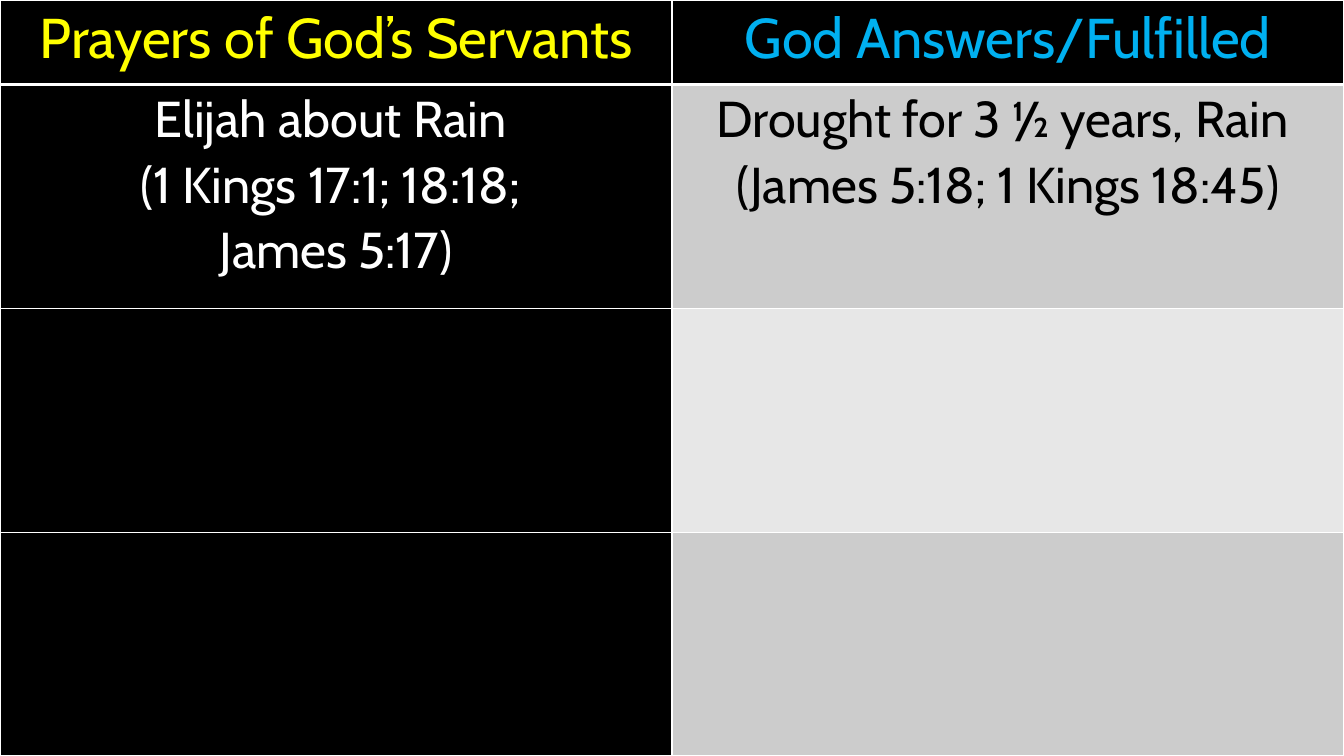
"""Build a slide with a table of prayers and how God answered them."""
from lxml.etree import SubElement
from pptx import Presentation
from pptx.dml.color import RGBColor as RGB
from pptx.enum.text import MSO_ANCHOR, PP_ALIGN
from pptx.oxml.ns import qn
from pptx.util import Cm, Pt

COLORS = {
    "black": "000000", "white": "FFFFFF", "yellow": "FFFF00",
    "blue": "00B0F0", "gray": "CCCCCC", "pale": "E7E7E7",
}
WIDTH, HEIGHT = Cm(33.87), Cm(19.05)
HEADER_HEIGHT = Cm(2.13)

ROWS = [
    (["Prayers of God’s Servants"], ["God Answers/Fulfilled"]),
    (["Elijah about Rain ", "(1 Kings 17:1; 18:18; ", "James 5:17)"],
     ["Drought for 3 ½ years, Rain ", "(James 5:18; 1 Kings 18:45)"]),
    ([], []),
    ([], []),
]
FILLS = [("black", "black"), ("black", "gray"), ("black", "pale"), ("black", "gray")]
HEADER_INKS = ("yellow", "blue")
BODY_INKS = ("white", "black")
CELL_FORMAT = {
    "margin_left": Cm(0.18), "margin_right": Cm(0.18),
    "margin_top": 0, "margin_bottom": 0,
    "vertical_anchor": MSO_ANCHOR.TOP,
}
PARAGRAPH_FORMAT = {"alignment": PP_ALIGN.CENTER, "line_spacing": 1.07}


def add_border(cell, side, points):
    line = SubElement(cell._tc.get_or_add_tcPr(), qn(f"a:{side}"), w=str(Pt(points)))
    ink = SubElement(line, qn("a:solidFill"))
    SubElement(ink, qn("a:srgbClr"), val=COLORS["white"])


deck = Presentation()
deck.slide_width, deck.slide_height = WIDTH, HEIGHT
slide = deck.slides.add_slide(deck.slide_layouts[6])
slide.background.fill.solid()
slide.background.fill.fore_color.rgb = RGB.from_string(COLORS["black"])

prayers = slide.shapes.add_table(len(ROWS), 2, 0, 0, WIDTH, HEIGHT).table
for column in prayers.columns:
    column.width = WIDTH // 2
for index, row in enumerate(prayers.rows):
    row.height = (HEIGHT - HEADER_HEIGHT) // 3 if index else HEADER_HEIGHT

for r, (entries, fills) in enumerate(zip(ROWS, FILLS)):
    inks, size = (BODY_INKS, 36) if r else (HEADER_INKS, 40)
    for c, (lines, fill, ink) in enumerate(zip(entries, fills, inks)):
        cell = prayers.cell(r, c)
        for name, value in CELL_FORMAT.items():
            setattr(cell, name, value)
        for side in ("lnL", "lnR", "lnT", "lnB"):
            heavy = (r, side) in ((0, "lnB"), (1, "lnT"))
            add_border(cell, side, 3 if heavy else 1)
        cell.fill.solid()
        cell.fill.fore_color.rgb = RGB.from_string(COLORS[fill])
        for number, text in enumerate(lines):
            frame = cell.text_frame
            paragraph = frame.add_paragraph() if number else frame.paragraphs[0]
            for name, value in PARAGRAPH_FORMAT.items():
                setattr(paragraph, name, value)
            run = paragraph.add_run()
            run.text = text
            for name, value in {"name": "Cabin", "size": Pt(size), "bold": False}.items():
                setattr(run.font, name, value)
            run.font.color.rgb = RGB.from_string(COLORS[ink])

deck.save("out.pptx")
